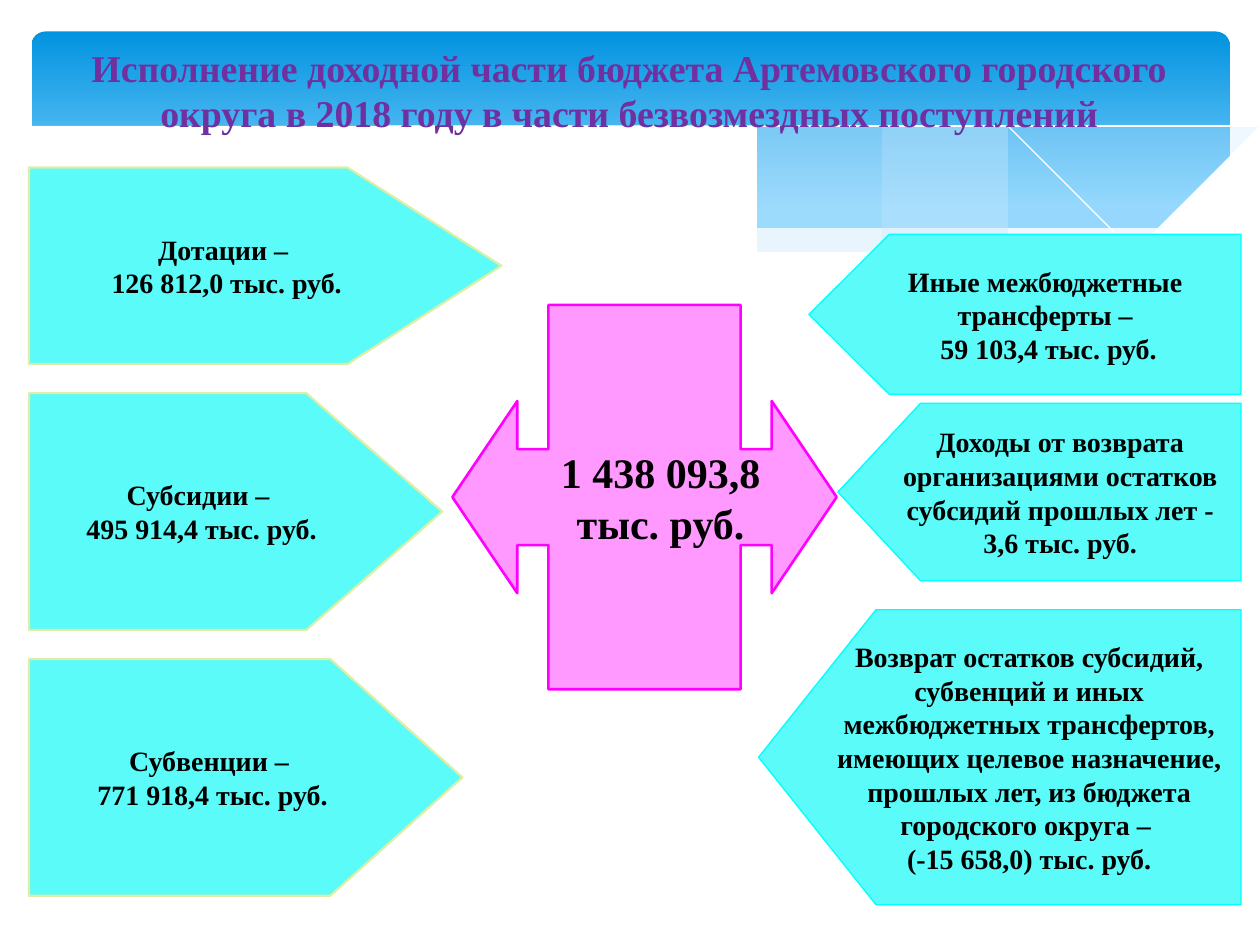
import pptx
import pptx.util
import pptx.dml.color
import pptx.enum.shapes
import pptx.enum.text
import pptx.oxml
import pptx.oxml.ns

Inches, Pt = pptx.util.Inches, pptx.util.Pt
SHAPES = pptx.enum.shapes.MSO_SHAPE
FONT = "Times New Roman"
CYAN, CYAN_LINE, LIME_LINE = "5AFBF8", "00FFFF", "DCEEA7"
LEFT_EDGE, RIGHT_EDGE = 0.23, 9.85

TITLE = ("Исполнение доходной части бюджета Артемовского городского "
         "округа в 2018 году в части безвозмездных поступлений")
TOTAL = ["1 438 093,8", "тыс. руб."]

# top, width, height, point depth, paragraphs
INCOMING = [
    (1.33, 3.75, 1.56, 0.783, ["Дотации – ", "126 812,0 тыс. руб."]),
    (3.12, 3.28, 1.88, 0.574, ["Субсидии – ", "495 914,4 тыс. руб."]),
    (5.23, 3.44, 1.88, 0.558, ["Субвенции – ", "771 918,4 тыс. руб."]),
]
OTHER = [
    (1.86, 3.43, 1.27, 0.502,
     ["Иные межбюджетные трансферты –", " 59 103,4 тыс. руб."]),
    (4.84, 3.83, 2.34, 0.398,
     ["Возврат остатков субсидий, субвенций и иных межбюджетных трансфертов, "
      "имеющих целевое назначение, прошлых лет, из бюджета городского округа – ",
      "(-15 658,0) тыс. руб."]),
    (3.2, 3.2, 1.41, 0.465,
     ["Доходы от возврата организациями остатков субсидий прошлых лет - 3,6 тыс. руб."]),
]

# Each wave is a list of edges; every edge is a smooth curve through its points.
WAVES = [
    dict(edges=[[(9.76, 0.94), (9.21, 1.04), (8.61, 1.18), (7.79, 1.37), (7.06, 1.52), (6.61, 1.6)],
                [(6.61, 1.6), (7.05, 1.65), (7.57, 1.7), (8.14, 1.72), (8.72, 1.69),
                 (9.21, 1.6), (9.76, 1.41)]],
         fill="C6E7FC", alpha=29),
    dict(edges=[[(8.93, 1.67), (8.37, 1.6), (7.41, 1.42), (6.29, 1.16), (5.41, 0.97),
                 (4.65, 0.86), (3.8, 0.8), (3.28, 0.81), (2.86, 0.86)],
                [(2.86, 0.86), (3.62, 0.97), (4.49, 1.16), (5.66, 1.43), (6.5, 1.58),
                 (7.36, 1.69), (8.07, 1.73), (8.57, 1.71), (8.93, 1.67)]],
         fill="C6E7FC", alpha=40),
    dict(edges=[[(3.09, 0.9), (3.44, 0.84), (4.16, 0.81), (5.1, 0.86), (6.08, 0.98),
                 (6.95, 1.14), (7.95, 1.36), (9.07, 1.66)]], line="FFFFFF"),
    dict(edges=[[(6.13, 1.51), (6.95, 1.3), (7.76, 1.11), (8.66, 0.93), (9.24, 0.84), (9.75, 0.8)]],
         line="FFFFFF"),
    dict(edges=[[(9.77, 1.41), (9.3, 1.57), (8.75, 1.67), (8.09, 1.71), (7.26, 1.67),
                 (6.26, 1.53), (5.29, 1.34), (4.47, 1.14), (3.65, 0.96), (2.92, 0.85),
                 (2.3, 0.79), (1.77, 0.78), (1.19, 0.82), (0.67, 0.91), (0.23, 1.07)],
                [(0.23, 2.24), (9.77, 2.24)]],
         fill="FFFFFF"),
]


def color(value):
    return pptx.dml.color.RGBColor.from_string(value)


def paint(shape, fill=None, line=None, line_width=0, alpha=None):
    shape.shadow.inherit = False
    if fill:
        shape.fill.solid()
        shape.fill.fore_color.rgb = color(fill)
    else:
        shape.fill.background()
    if alpha:
        solid = shape.fill._xPr.find(pptx.oxml.ns.qn("a:solidFill"))
        solid[0].append(pptx.oxml.parse_xml(
            f'<a:alpha {pptx.oxml.ns.nsdecls("a")} val="{alpha * 1000}"/>'))
    if line:
        shape.line.color.rgb = color(line)
        shape.line.width = Pt(line_width)
    else:
        shape.line.fill.background()


def write(shape, paragraphs, size=16, text_color="000000", wrap=True, **body):
    """Fill the shape with centred bold text; body holds bodyPr attributes."""
    frame = shape.text_frame
    frame.word_wrap = wrap
    frame.vertical_anchor = pptx.enum.text.MSO_ANCHOR.MIDDLE
    for name, value in body.items():
        frame._txBody.bodyPr.set(name, value)
    for index, text in enumerate(paragraphs):
        paragraph = frame.paragraphs[0] if index == 0 else frame.add_paragraph()
        paragraph.alignment = pptx.enum.text.PP_ALIGN.CENTER
        run = paragraph.add_run()
        run.text = text
        run.font.name, run.font.size, run.font.bold = FONT, Pt(size), True
        run.font.color.rgb = color(text_color)


def add_shape(slide, kind, left, top, width, height, adjustments):
    shape = slide.shapes.add_shape(kind, Inches(left), Inches(top), Inches(width), Inches(height))
    for index, value in enumerate(adjustments):
        shape.adjustments[index] = value
    return shape


def smooth(points, steps=6):
    """Catmull-Rom curve through the points."""
    padded = [points[0], *points, points[-1]]
    curve = []
    for a, b, c, d in zip(padded, padded[1:], padded[2:], padded[3:]):
        for step in range(steps):
            t = step / steps
            curve.append(tuple(
                0.5 * (2 * q + (r - p) * t + (2 * p - 5 * q + 4 * r - s) * t ** 2
                       + (3 * q - p - 3 * r + s) * t ** 3)
                for p, q, r, s in zip(a, b, c, d)))
    return curve + [points[-1]]


def add_wave(slide, edges, **style):
    points = [point for edge in edges for point in smooth(edge)]
    builder = slide.shapes.build_freeform(*points[0], scale=Inches(1))
    builder.add_line_segments(points[1:], close="fill" in style)
    paint(builder.convert_to_shape(), **style)


def add_banner(slide):
    banner = add_shape(slide, SHAPES.ROUNDED_RECTANGLE, 0.25, 0.25, 9.51, 1.56, [0.071])
    paint(banner)
    banner.fill.gradient()
    banner.fill.gradient_angle = 270
    for stop, position, value in zip(banner.fill.gradient_stops, (0, 0.9), ("0293E0", "83D3FE")):
        stop.position = position
        stop.color.rgb = color(value)
    for wave in WAVES:
        add_wave(slide, **wave)


def main():
    presentation = pptx.Presentation()
    presentation.slide_width, presentation.slide_height = Inches(10), Inches(7.5)
    slide = presentation.slides.add_slide(presentation.slide_layouts[6])
    add_banner(slide)

    title = slide.shapes.add_textbox(Inches(0.23), Inches(0.28), Inches(9.53), Inches(0.87))
    write(title, [TITLE], size=21.6, text_color="7030A0")

    total = add_shape(slide, SHAPES.UP_DOWN_ARROW_CALLOUT, 3.59, 2.42, 3.05, 3.05,
                      [0.25, 0.25, 0.169, 0.5])
    total.rotation = 270
    paint(total, "FF99FF", "FF00FF", 1.5)
    write(total, TOTAL, size=24, wrap=False, vert="eaVert")

    for top, width, height, depth, text in OTHER:
        arrow = add_shape(slide, SHAPES.PENTAGON, RIGHT_EDGE - width, top, width, height, [depth])
        arrow.rotation = 180
        paint(arrow, CYAN, CYAN_LINE, 0.75)
        write(arrow, text, rot="10800000")
    for top, width, height, depth, text in INCOMING:
        arrow = add_shape(slide, SHAPES.PENTAGON, LEFT_EDGE, top, width, height, [depth])
        paint(arrow, CYAN, LIME_LINE, 1.25)
        write(arrow, text)

    presentation.save("out.pptx")


if __name__ == "__main__":
    main()
